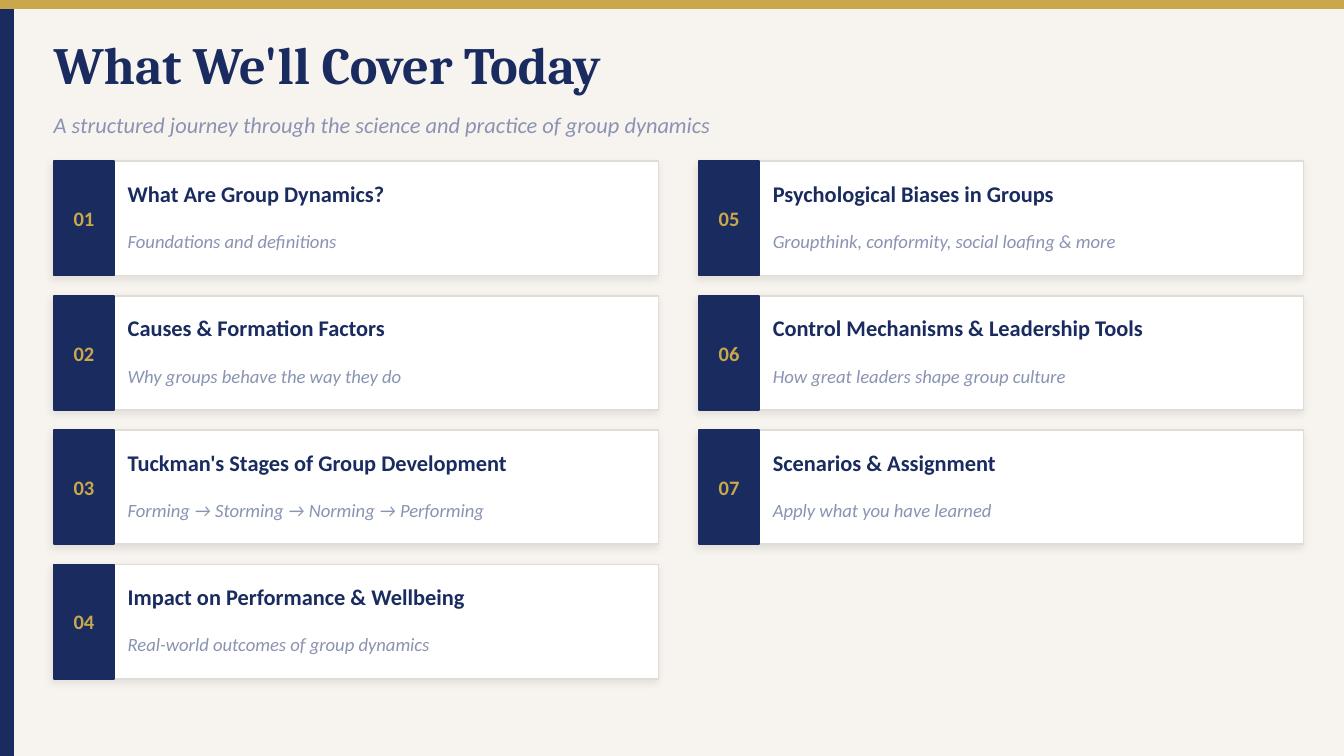
from dataclasses import dataclass

from lxml import etree
from pptx import Presentation
from pptx.dml.color import RGBColor
from pptx.enum import shapes, text
from pptx.oxml import ns
from pptx.shapes.autoshape import Shape
from pptx.slide import Slide
from pptx.util import Inches, Pt

NAVY = RGBColor(0x1A, 0x2B, 0x5F)
GOLD = RGBColor(0xC9, 0xA8, 0x4C)
GREY = RGBColor(0x8A, 0x93, 0xB2)
EDGE = RGBColor(0xE0, 0xDD, 0xD6)
CREAM = RGBColor(0xF7, 0xF4, 0xEF)
WHITE = RGBColor(0xFF, 0xFF, 0xFF)

WIDE = 10
HIGH = WIDE * 9 / 16
LEFT, TOP = 0.4, 1.2
STEP_X, STEP_Y = 4.8, 1
CARD_W, CARD_H = 4.5, 0.85
TAB_W = 0.45
ROWS = 4


@dataclass(frozen=True)
class Box:
    x: float
    y: float
    w: float
    h: float

    def span(self) -> tuple[Inches, Inches, Inches, Inches]:
        return Inches(self.x), Inches(self.y), Inches(self.w), Inches(self.h)


@dataclass(frozen=True)
class Style:
    size: int
    color: RGBColor
    font: str = "Calibri"
    bold: bool = False
    slant: bool = False
    align: text.PP_ALIGN = text.PP_ALIGN.LEFT


@dataclass(frozen=True)
class Topic:
    name: str
    note: str


TITLE = Style(28, NAVY, "Cambria", bold=True)
LEAD = Style(12, GREY, slant=True)
NUMBER = Style(11, GOLD, bold=True, align=text.PP_ALIGN.CENTER)
NAME = Style(12, NAVY, bold=True)
NOTE = Style(10, GREY, slant=True)

TOPICS = [
    Topic("What Are Group Dynamics?", "Foundations and definitions"),
    Topic("Causes & Formation Factors", "Why groups behave the way they do"),
    Topic("Tuckman's Stages of Group Development",
          "Forming → Storming → Norming → Performing"),
    Topic("Impact on Performance & Wellbeing",
          "Real-world outcomes of group dynamics"),
    Topic("Psychological Biases in Groups",
          "Groupthink, conformity, social loafing & more"),
    Topic("Control Mechanisms & Leadership Tools",
          "How great leaders shape group culture"),
    Topic("Scenarios & Assignment", "Apply what you have learned"),
]


def add_rect(slide: Slide, box: Box, fill: RGBColor, edge: RGBColor) -> Shape:
    rect = slide.shapes.add_shape(shapes.MSO_SHAPE.RECTANGLE, *box.span())
    rect.shadow.inherit = False
    rect.fill.solid()
    rect.fill.fore_color.rgb = fill
    rect.line.color.rgb = edge
    rect.line.width = Pt(1)
    return rect


def add_text(slide: Slide, box: Box, words: str, style: Style) -> None:
    frame = slide.shapes.add_textbox(*box.span()).text_frame
    frame.word_wrap = True
    frame.margin_left = frame.margin_right = 0
    frame.margin_top = frame.margin_bottom = 0
    frame.vertical_anchor = text.MSO_ANCHOR.MIDDLE
    frame.text = words
    para = frame.paragraphs[0]
    para.alignment = style.align
    font = para.runs[0].font
    font.name = style.font
    font.size = Pt(style.size)
    font.color.rgb = style.color
    font.bold = style.bold
    font.italic = style.slant


def add_shade(rect: Shape) -> None:
    effects = rect.element.spPr.find(ns.qn("a:effectLst"))
    shade = etree.SubElement(
        effects, ns.qn("a:outerShdw"), blurRad=str(Pt(4)), dist=str(Pt(2)),
        dir=str(135 * 60000), algn="bl", rotWithShape="0")
    color = etree.SubElement(shade, ns.qn("a:srgbClr"), val="000000")
    etree.SubElement(color, ns.qn("a:alpha"), val="7000")


def add_card(slide: Slide, index: int, topic: Topic) -> None:
    col, row = divmod(index, ROWS)
    x, y = LEFT + col * STEP_X, TOP + row * STEP_Y
    tab = Box(x, y, TAB_W, CARD_H)
    add_shade(add_rect(slide, Box(x, y, CARD_W, CARD_H), WHITE, EDGE))
    add_rect(slide, tab, NAVY, NAVY)
    add_text(slide, tab, f"{index + 1:02}", NUMBER)
    add_text(slide, Box(x + 0.55, y + 0.05, 3.85, 0.38), topic.name, NAME)
    add_text(slide, Box(x + 0.55, y + 0.42, 3.85, 0.35), topic.note, NOTE)


def main() -> None:
    deck = Presentation()
    deck.slide_width, deck.slide_height = Inches(WIDE), Inches(HIGH)
    slide = deck.slides.add_slide(deck.slide_layouts[6])
    slide.background.fill.solid()
    slide.background.fill.fore_color.rgb = CREAM

    add_rect(slide, Box(0, 0, 0.1, HIGH), NAVY, NAVY)
    add_rect(slide, Box(0, 0, WIDE, 0.06), GOLD, GOLD)
    add_text(slide, Box(LEFT, 0.2, 9, 0.55), "What We'll Cover Today", TITLE)
    add_text(slide, Box(LEFT, 0.78, 9, 0.3),
             "A structured journey through the science and practice of group dynamics",
             LEAD)
    for index, topic in enumerate(TOPICS):
        add_card(slide, index, topic)

    deck.save("out.pptx")


if __name__ == "__main__":
    main()
